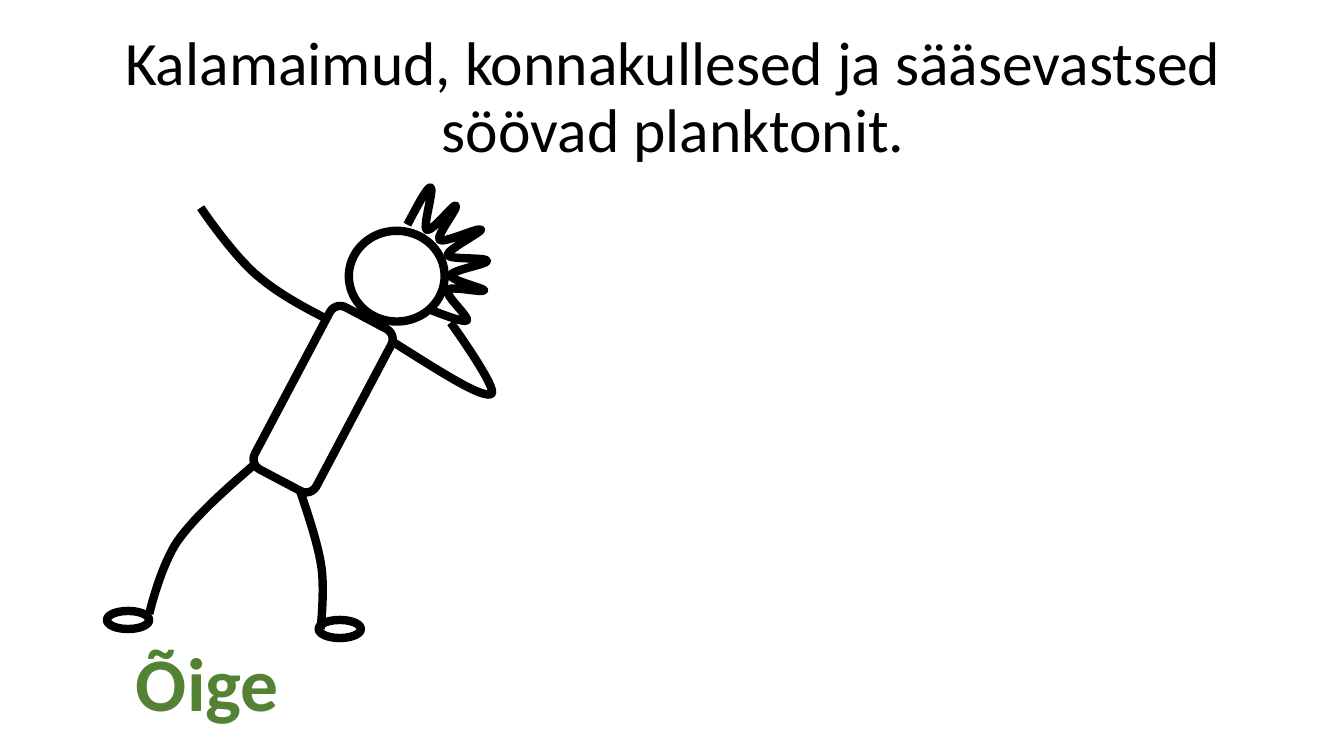
import math

import pptx
import pptx.util
from lxml import etree
from pptx.dml.color import RGBColor
from pptx.enum.shapes import MSO_SHAPE
from pptx.enum.text import MSO_ANCHOR, MSO_AUTO_SIZE, PP_ALIGN
from pptx.oxml.ns import qn
from pptx.util import Inches

BLACK = RGBColor(0x00, 0x00, 0x00)
WHITE = RGBColor(0xFF, 0xFF, 0xFF)
GREEN = RGBColor(0x54, 0x82, 0x35)
FONT = "Calibri"
LINE_WIDTH = 6

# Content
TITLE = "Kalamaimud, konnakullesed ja sääsevastsed söövad planktonit."
ANSWER = "Õige"

# Curves: (left, top, width, height), rotation, then the points on the slide:
# a start, then two control points and an end per segment
HAIR = ((3.77, 2.13, 1.36, 0.77), 66.9, [
    (4.04, 2.23),
    (4.14, 2.04), (4.24, 1.85), (4.27, 1.86),
    (4.31, 1.87), (4.19, 2.25), (4.23, 2.28),
    (4.28, 2.31), (4.50, 2.02), (4.52, 2.04),
    (4.55, 2.06), (4.32, 2.34), (4.36, 2.38),
    (4.40, 2.42), (4.75, 2.25), (4.77, 2.28),
    (4.78, 2.30), (4.43, 2.48), (4.44, 2.53),
    (4.45, 2.58), (4.83, 2.55), (4.83, 2.59),
    (4.84, 2.62), (4.48, 2.68), (4.47, 2.73),
    (4.46, 2.78), (4.80, 2.86), (4.80, 2.88),
    (4.79, 2.91), (4.46, 2.83), (4.44, 2.88),
    (4.41, 2.93), (4.66, 3.15), (4.63, 3.18),
    (4.60, 3.21), (4.26, 3.07), (4.26, 3.07)])
RAISED_ARM = ((1.72, 2.65, 1.94, 0.18), 38.9, [
    (3.49, 3.29),
    (3.15, 3.12), (2.82, 2.96), (2.57, 2.75),
    (2.32, 2.55), (1.99, 2.06), (1.99, 2.06)])
BENT_ARM = ((3.95, 3.28, 1.08, 0.51), 218, [
    (3.91, 3.40),
    (4.34, 3.67), (4.77, 3.95), (4.87, 3.91),
    (4.96, 3.88), (4.47, 3.20), (4.47, 3.20)])
LEFT_LEG = ((1.76, 4.47, 0.42, 1.76), 22.8, [
    (2.51, 4.62),
    (2.22, 4.87), (1.93, 5.13), (1.76, 5.37),
    (1.59, 5.62), (1.48, 6.09), (1.48, 6.09)])
RIGHT_LEG = ((2.98, 4.88, 0.22, 1.35), 0, [
    (2.98, 4.88),
    (3.07, 5.15), (3.16, 5.42), (3.19, 5.64),
    (3.22, 5.87), (3.18, 6.24), (3.18, 6.24)])

# Solid parts: (left, top, width, height), rotation, preset, fill
TORSO = ((2.86, 3.05, 0.69, 1.82), 27.9, MSO_SHAPE.ROUNDED_RECTANGLE, WHITE)
HEAD = ((3.46, 2.29, 0.95, 0.90), 0, MSO_SHAPE.OVAL, WHITE)
LEFT_FOOT = ((1.06, 6.06, 0.42, 0.18), 180, MSO_SHAPE.OVAL, None)
RIGHT_FOOT = ((3.16, 6.15, 0.42, 0.18), 0, MSO_SHAPE.OVAL, None)

# Back to front
FIGURE = [HAIR, RAISED_ARM, TORSO, HEAD, LEFT_LEG, LEFT_FOOT,
          RIGHT_LEG, RIGHT_FOOT, BENT_ARM]


def style_outline(shape, fill=None):
    shape.shadow.inherit = False
    if fill is None:
        shape.fill.background()
    else:
        shape.fill.solid()
        shape.fill.fore_color.rgb = fill
    shape.line.color.rgb = BLACK
    shape.line.width = pptx.util.Pt(LINE_WIDTH)


def local_points(box, rotation, points):
    """Turn slide points back by the rotation, relative to the box corner."""
    left, top, width, height = box
    cosine = math.cos(math.radians(rotation))
    sine = math.sin(math.radians(rotation))
    result = []
    for x, y in points:
        dx, dy = x - left - width / 2, y - top - height / 2
        result.append((Inches(width / 2 + dx * cosine + dy * sine),
                       Inches(height / 2 - dx * sine + dy * cosine)))
    return result


def add_curve(group, box, rotation, points):
    local = local_points(box, rotation, points)
    builder = group.shapes.build_freeform(*local[0])
    builder.add_line_segments(local[3::3], close=False)
    shape = builder.convert_to_shape()
    shape.left, shape.top, shape.width, shape.height = map(Inches, box)
    shape.rotation = rotation

    # Swap the straight segments for cubic curves
    outline = next(shape.element.iter(qn("a:path")))
    for segment in list(outline):
        outline.remove(segment)
    outline.set("w", str(shape.width))
    outline.set("h", str(shape.height))
    commands = [("a:moveTo", local[:1])]
    commands += [("a:cubicBezTo", local[first:first + 3])
                 for first in range(1, len(local), 3)]
    for tag, stops in commands:
        command = etree.SubElement(outline, qn(tag))
        for x, y in stops:
            etree.SubElement(command, qn("a:pt"), x=str(x), y=str(y))
    style_outline(shape)


def add_solid(group, box, rotation, preset, fill):
    shape = group.shapes.add_shape(preset, *map(Inches, box))
    shape.rotation = rotation
    style_outline(shape, fill)


def add_text(slide, text, box, size, color, bold=False):
    frame = slide.shapes.add_textbox(*map(Inches, box)).text_frame
    frame.word_wrap = True
    paragraph = frame.paragraphs[0]
    paragraph.text = text
    paragraph.font.name = FONT
    paragraph.font.size = pptx.util.Pt(size)
    paragraph.font.bold = bold
    paragraph.font.color.rgb = color
    return frame


def main():
    presentation = pptx.Presentation()
    presentation.slide_width = Inches(13.33)
    presentation.slide_height = Inches(7.5)
    slide = presentation.slides.add_slide(presentation.slide_layouts[6])

    # Statement
    title = add_text(slide, TITLE, (0.23, -0.2, 12.9, 2.37), 44, BLACK)
    title.vertical_anchor = MSO_ANCHOR.MIDDLE
    title.margin_left = title.margin_right = Inches(0.13)
    title.margin_top = title.margin_bottom = Inches(0.07)
    title.paragraphs[0].alignment = PP_ALIGN.CENTER
    title.paragraphs[0].line_spacing = 0.9

    # Stick figure
    figure = slide.shapes.add_group_shape()
    for part in FIGURE:
        if isinstance(part[2], list):
            add_curve(figure, *part)
        else:
            add_solid(figure, *part)

    # Answer
    answer = add_text(slide, ANSWER, (1.25, 6.26, 1.84, 1.01), 54, GREEN, bold=True)
    answer.auto_size = MSO_AUTO_SIZE.SHAPE_TO_FIT_TEXT

    presentation.save("out.pptx")


if __name__ == "__main__":
    main()
